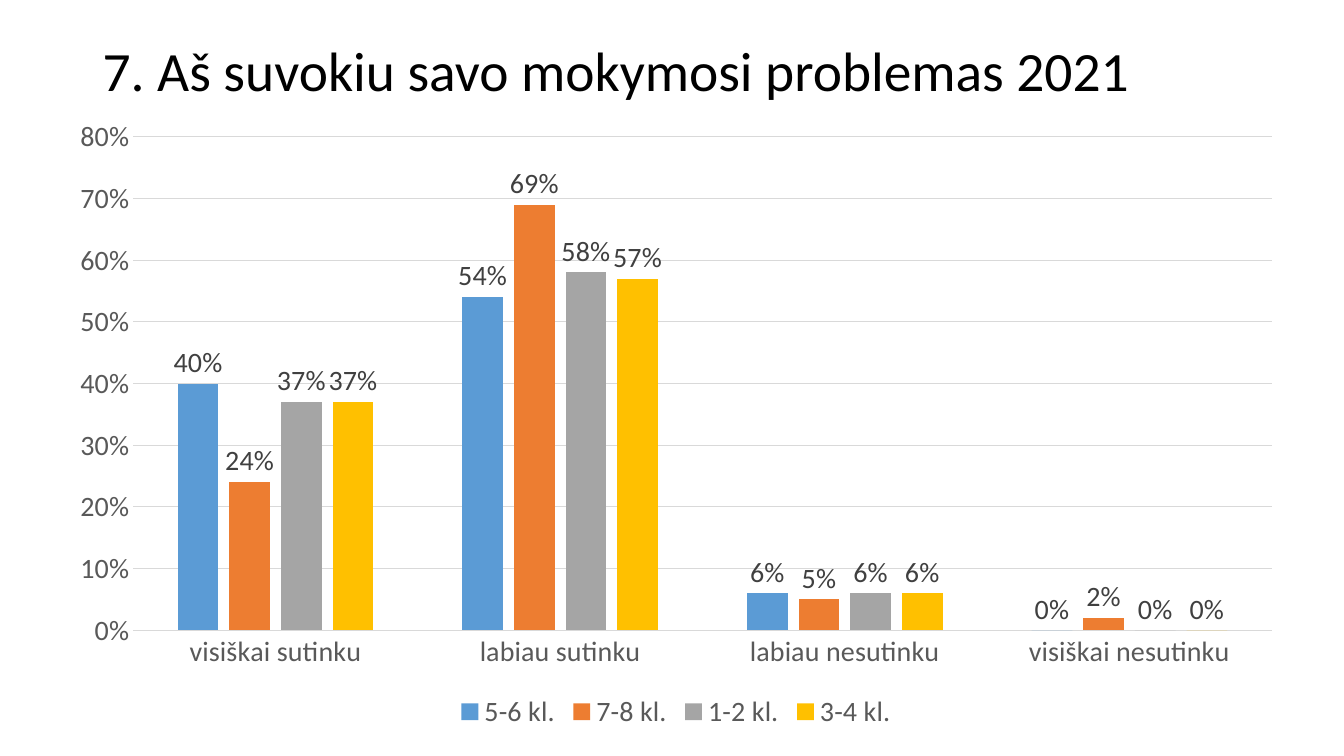
from pptx import Presentation
from pptx.chart.data import CategoryChartData
from pptx.dml.color import RGBColor
from pptx.enum.chart import XL_CHART_TYPE, XL_LABEL_POSITION, XL_LEGEND_POSITION, XL_TICK_MARK
from pptx.enum.text import MSO_ANCHOR
from pptx.util import Inches, Pt

CLUSTERED = XL_CHART_TYPE.COLUMN_CLUSTERED
OUTSIDE_END = XL_LABEL_POSITION.OUTSIDE_END
LEGEND_BOTTOM = XL_LEGEND_POSITION.BOTTOM
NO_TICK = XL_TICK_MARK.NONE
MIDDLE = MSO_ANCHOR.MIDDLE

BLACK = RGBColor(0x00, 0x00, 0x00)
AXIS_GREY = RGBColor(0x59, 0x59, 0x59)
LABEL_GREY = RGBColor(0x40, 0x40, 0x40)
GRID_GREY = RGBColor(0xD9, 0xD9, 0xD9)
BLUE = RGBColor(0x5B, 0x9B, 0xD5)
ORANGE = RGBColor(0xED, 0x7D, 0x31)
GREY = RGBColor(0xA5, 0xA5, 0xA5)
YELLOW = RGBColor(0xFF, 0xC0, 0x00)

ANSWERS = ["visiškai sutinku", "labiau sutinku", "labiau nesutinku", "visiškai nesutinku"]
GRADES = [
    ("5-6 kl.", BLUE, (0.40, 0.54, 0.06, 0)),
    ("7-8 kl.", ORANGE, (0.24, 0.69, 0.05, 0.02)),
    ("1-2 kl.", GREY, (0.37, 0.58, 0.06, 0)),
    ("3-4 kl.", YELLOW, (0.37, 0.57, 0.06, 0)),
]


class SurveySlide:
    font_name = "Calibri"
    title_size = 39.6
    chart_size = 20
    percent = "0%"

    def __init__(self, slide):
        self.slide = slide

    def style_font(self, font, size, color):
        font.name = self.font_name
        font.size = Pt(size)
        font.color.rgb = color

    def style_line(self, line):
        line.color.rgb = GRID_GREY
        line.width = Pt(0.75)

    def add_title(self, text, left, top, width, height):
        box = self.slide.shapes.add_textbox(
            Inches(left), Inches(top), Inches(width), Inches(height))
        frame = box.text_frame
        frame.word_wrap = True
        frame.vertical_anchor = MIDDLE
        frame.text = text
        heading = frame.paragraphs[0]
        heading.line_spacing = 0.9
        self.style_font(heading.runs[0].font, self.title_size, BLACK)

    def add_column_chart(self, categories, groups, left, top, width, height):
        data = CategoryChartData(number_format=self.percent)
        data.categories = categories
        for name, _, shares in groups:
            data.add_series(name, shares)
        chart = self.slide.shapes.add_chart(
            CLUSTERED, Inches(left), Inches(top), Inches(width), Inches(height), data).chart
        self.style_font(chart.font, 10, BLACK)
        chart.has_title = False

        plot = chart.plots[0]
        plot.gap_width = 219
        plot.overlap = -27
        plot.vary_by_categories = False
        for series, (_, color, _) in zip(plot.series, groups):
            self.style_series(series, color)
        self.style_axes(chart)

        chart.has_legend = True
        chart.legend.position = LEGEND_BOTTOM
        chart.legend.include_in_layout = False
        self.style_font(chart.legend.font, self.chart_size, AXIS_GREY)

    def style_series(self, series, color):
        series.format.fill.solid()
        series.format.fill.fore_color.rgb = color
        series.invert_if_negative = False
        labels = series.data_labels
        labels.show_value = True
        labels.position = OUTSIDE_END
        labels.number_format = self.percent
        labels.number_format_is_linked = False
        self.style_font(labels.font, self.chart_size, LABEL_GREY)

    def style_axes(self, chart):
        answer_axis, share_axis = chart.category_axis, chart.value_axis
        for axis in (answer_axis, share_axis):
            axis.major_tick_mark = NO_TICK
            axis.minor_tick_mark = NO_TICK
            self.style_font(axis.tick_labels.font, self.chart_size, AXIS_GREY)
        self.style_line(answer_axis.format.line)
        share_axis.format.line.fill.background()
        share_axis.has_major_gridlines = True
        self.style_line(share_axis.major_gridlines.format.line)
        share_axis.minimum_scale = 0
        share_axis.maximum_scale = 0.8
        share_axis.major_unit = 0.1
        share_axis.tick_labels.number_format = self.percent
        share_axis.tick_labels.number_format_is_linked = False


def main():
    deck = Presentation()
    deck.slide_width = Inches(13.33)
    deck.slide_height = Inches(7.5)
    blank_layout = deck.slide_layouts[6]
    survey = SurveySlide(deck.slides.add_slide(blank_layout))
    survey.add_title("7. Aš suvokiu savo mokymosi problemas 2021", 0.92, 0.4, 11.94, 0.66)
    survey.add_column_chart(ANSWERS, GRADES, 0.55, 1.06, 12.31, 6.23)
    deck.save("out.pptx")


if __name__ == "__main__":
    main()
